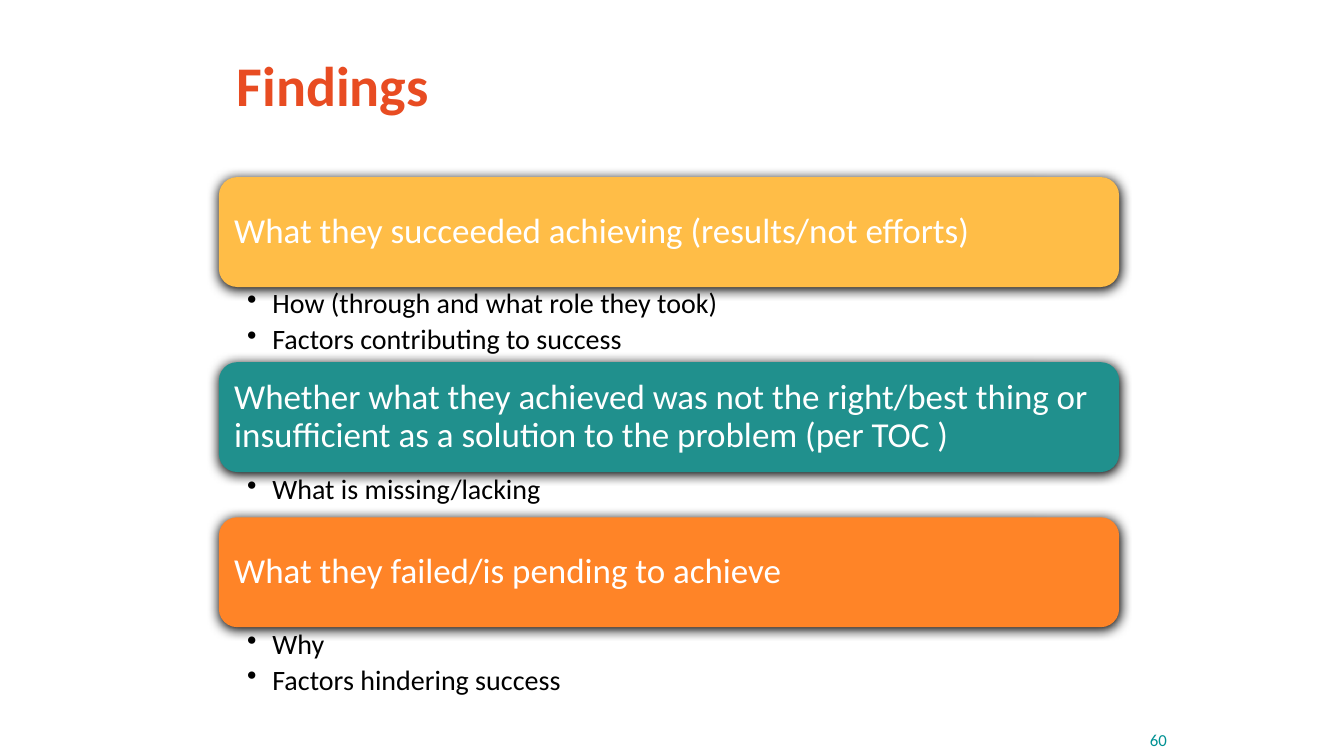
from dataclasses import dataclass

from lxml.etree import SubElement
from pptx import Presentation
from pptx.dml.color import RGBColor
from pptx.enum.shapes import MSO_SHAPE as Preset
from pptx.enum.text import MSO_ANCHOR as Anchor, PP_ALIGN as Align
from pptx.oxml.ns import qn
from pptx.util import Pt

RED = RGBColor(0xE8, 0x4C, 0x22)
AMBER = RGBColor(0xFF, 0xBD, 0x47)
TEAL = RGBColor(0x20, 0x90, 0x8D)
ORANGE = RGBColor(0xFF, 0x84, 0x27)
CYAN = RGBColor(0x00, 0x91, 0x93)
WHITE = RGBColor(0xFF, 0xFF, 0xFF)
BLACK = RGBColor(0x00, 0x00, 0x00)

FONT = "Calibri"
LEFT, TOP, WIDTH = 156.4, 126.5, 643
BAR = 78.5
PAD, LINE = 10.9, 21.4


@dataclass
class Finding:
    head: str
    fill: RGBColor
    points: list[str]


FINDINGS = [
    Finding("What they succeeded achieving (results/not efforts)", AMBER,
            ["How (through and what role they took)",
             "Factors contributing to success"]),
    Finding("Whether what they achieved was not the right/best thing or "
            "insufficient as a solution to the problem (per TOC )", TEAL,
            ["What is missing/lacking"]),
    Finding("What they failed/is pending to achieve", ORANGE,
            ["Why", "Factors hindering success"]),
]


def write(shape, *lines: str, size: float, color: RGBColor, bold: bool = False,
          align: Align = Align.LEFT, anchor: Anchor = Anchor.MIDDLE,
          inset: tuple = (7.2, 3.6, 7.2, 3.6), space: float = 0.9,
          after: float = 0, bullet: str = "") -> None:
    """Fill a shape with one paragraph per line; inset is left, top, right, bottom."""
    frame = shape.text_frame
    frame.word_wrap = True
    frame.vertical_anchor = anchor
    (frame.margin_left, frame.margin_top,
     frame.margin_right, frame.margin_bottom) = map(Pt, inset)
    for i, line in enumerate(lines):
        para = frame.add_paragraph() if i else frame.paragraphs[0]
        para.alignment = align
        para.line_spacing = space
        para.space_after = Pt(after)
        if bullet:
            props = para._p.get_or_add_pPr()
            props.set("marL", str(Pt(18)))
            props.set("indent", str(-Pt(18)))
            SubElement(props, qn("a:buChar"), char=bullet)
        run = para.add_run()
        run.text = line
        run.font.name = FONT
        run.font.size = Pt(size)
        run.font.bold = bold
        run.font.color.rgb = color


def shade(shape) -> None:
    """Give a shape a soft black shadow just below it."""
    shape.shadow.inherit = False
    effects = shape._element.spPr.find(qn("a:effectLst"))
    outer = SubElement(effects, qn("a:outerShdw"), blurRad=str(Pt(8.5)),
                       dist=str(Pt(1)), dir="5400000", rotWithShape="0")
    SubElement(outer, qn("a:srgbClr"), val=str(BLACK))


def box(slide, *area: float):
    return slide.shapes.add_textbox(*map(Pt, area))


def draw(slide, item: Finding, top: float) -> float:
    """Draw a bar with its bullets and return the top of the next one."""
    bar = slide.shapes.add_shape(Preset.ROUNDED_RECTANGLE,
                                 *map(Pt, (LEFT, top, WIDTH, BAR)))
    bar.fill.solid()
    bar.fill.fore_color.rgb = item.fill
    bar.line.fill.background()
    shade(bar)
    write(bar, item.head, size=25, color=WHITE, inset=(7.2,) * 4)

    tall = PAD + LINE * len(item.points)
    notes = box(slide, LEFT, top + BAR, WIDTH, tall)
    write(notes, *item.points, size=20, color=BLACK, anchor=Anchor.TOP,
          inset=(20.2, 2, 13.7, 2), after=4, bullet="•")
    return top + BAR + tall


def main() -> None:
    deck = Presentation()
    deck.slide_width, deck.slide_height = Pt(960), Pt(540)
    slide = deck.slides.add_slide(deck.slide_layouts[6])

    write(box(slide, 162, 10.8, 772, 104.4), "Findings",
          size=40, color=RED, bold=True)
    top = TOP
    for item in FINDINGS:
        top = draw(slide, item, top)
    write(box(slide, 672.5, 514, 168, 28.8), "60",
          size=12, color=CYAN, align=Align.RIGHT, space=1.0)
    deck.save("out.pptx")


if __name__ == "__main__":
    main()
